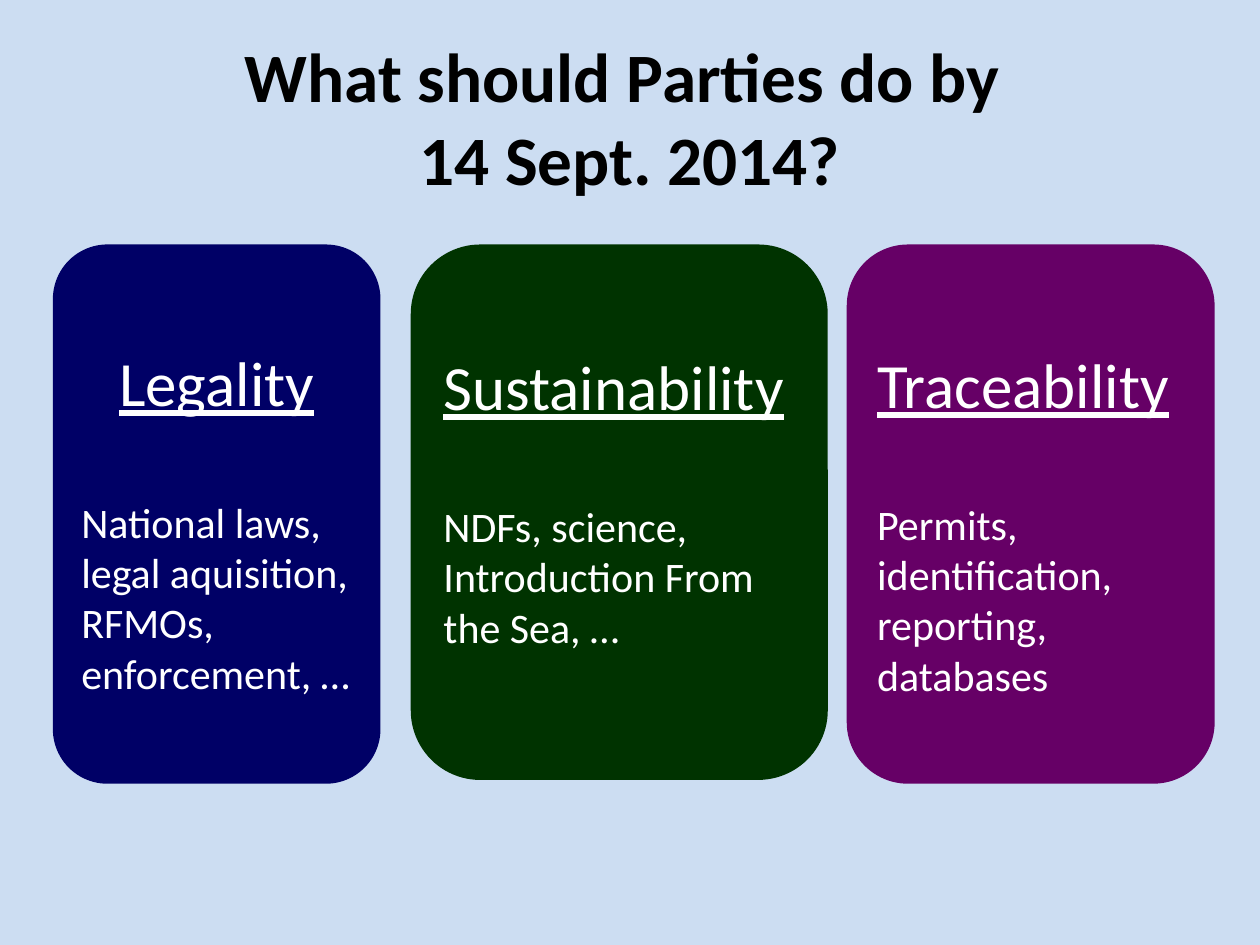
from pptx import Presentation
from pptx.dml.color import RGBColor
from pptx.enum.shapes import MSO_SHAPE
from pptx.enum.text import MSO_ANCHOR, PP_ALIGN
from pptx.util import Inches, Pt

COLORS = {
    "background": "CCDDF2",
    "title": "000000",
    "text": "FFFFFF",
    "legality": "000066",
    "sustainability": "003300",
    "traceability": "660066",
}


def color(name):
    return RGBColor.from_string(COLORS[name])


def set_font(paragraph, size, color_name):
    paragraph.font.name = "Calibri"
    paragraph.font.size = Pt(size)
    paragraph.font.color.rgb = color(color_name)


prs = Presentation()
prs.slide_width, prs.slide_height = Inches(10), Inches(7.5)
slide = prs.slides.add_slide(prs.slide_layouts[6])
slide.background.fill.solid()
slide.background.fill.fore_color.rgb = color("background")

title = slide.shapes.add_textbox(Inches(0.5), Inches(0.3), Inches(9), Inches(1.25)).text_frame
title.word_wrap = True
title.vertical_anchor = MSO_ANCHOR.MIDDLE
question = title.paragraphs[0]
question.text = "What should Parties do by \v14 Sept. 2014?"
question.alignment = PP_ALIGN.CENTER
set_font(question, 39.6, "title")
question.font.bold = True

# heading, details, left, width, height, heading alignment
pillars = [
    ("Legality", "National laws, legal aquisition, RFMOs, enforcement, …",
     0.42, 2.6, 4.28, PP_ALIGN.CENTER),
    ("Sustainability", "NDFs, science, Introduction From the Sea, …",
     3.26, 3.31, 4.25, PP_ALIGN.LEFT),
    ("Traceability", "Permits, identification, reporting, databases",
     6.72, 2.92, 4.28, PP_ALIGN.LEFT),
]
for heading_text, details_text, left, width, height, alignment in pillars:
    panel = slide.shapes.add_shape(
        MSO_SHAPE.ROUNDED_RECTANGLE,
        Inches(left), Inches(1.94), Inches(width), Inches(height))
    panel.shadow.inherit = False
    panel.fill.solid()
    panel.fill.fore_color.rgb = color(heading_text.lower())
    panel.line.fill.background()

    frame = panel.text_frame
    frame.word_wrap = True
    frame.vertical_anchor = MSO_ANCHOR.TOP
    frame.margin_top = Inches(0.66)

    heading = frame.paragraphs[0]
    heading.text = heading_text
    heading.alignment = alignment
    set_font(heading, 36, "text")
    heading.font.underline = True

    details = frame.add_paragraph()
    details.text = details_text
    details.alignment = PP_ALIGN.LEFT
    details.space_before = Pt(44)
    set_font(details, 24, "text")

prs.save("out.pptx")
